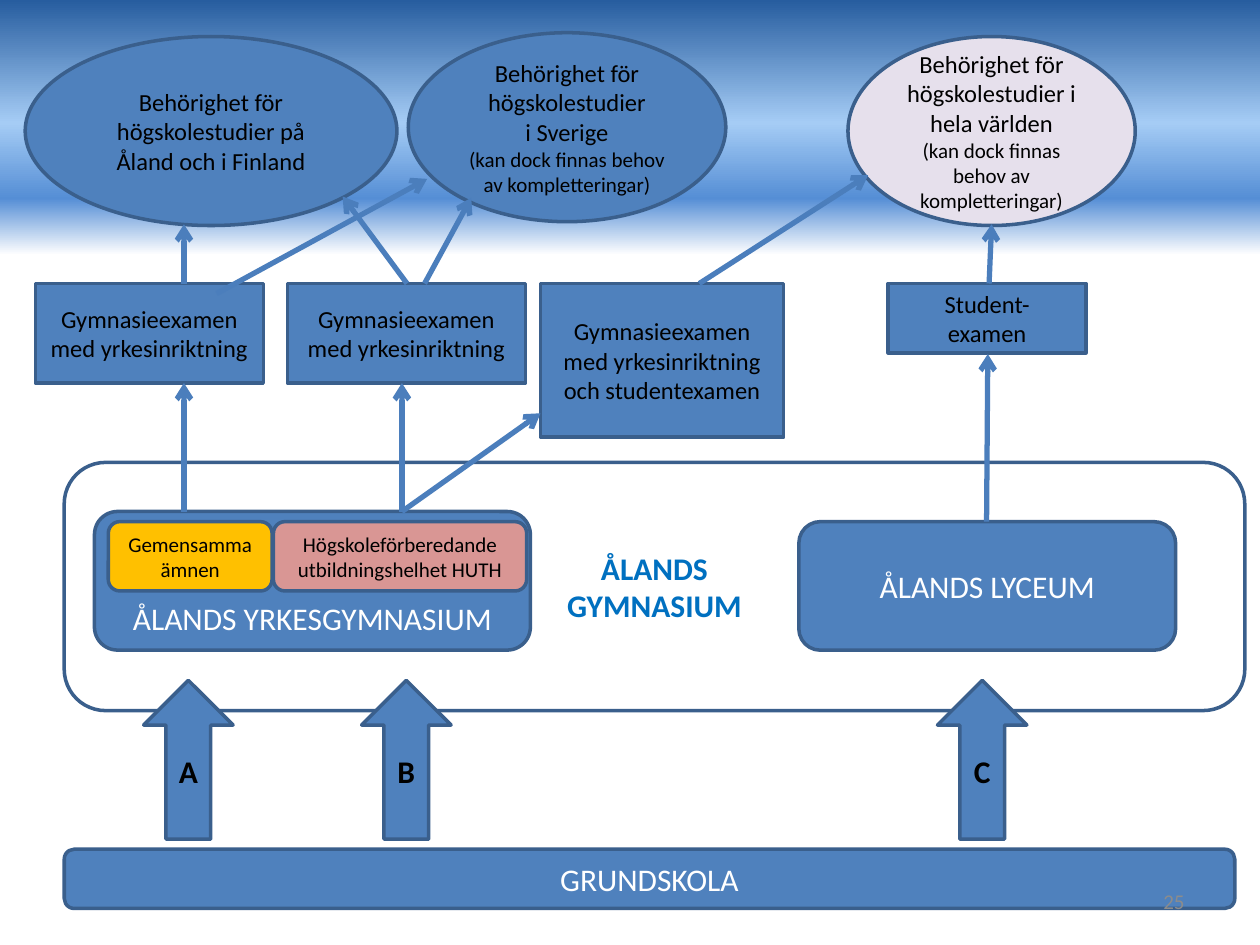
from lxml import etree
from pptx import Presentation
from pptx.dml.color import RGBColor
from pptx.enum.shapes import MSO_CONNECTOR, MSO_SHAPE
from pptx.enum.text import MSO_ANCHOR, PP_ALIGN
from pptx.oxml.ns import qn
from pptx.util import Inches, Pt

ROUND, RECT = MSO_SHAPE.ROUNDED_RECTANGLE, MSO_SHAPE.RECTANGLE
OVAL, UP = MSO_SHAPE.OVAL, MSO_SHAPE.UP_ARROW
MIDDLE, BOTTOM = MSO_ANCHOR.MIDDLE, MSO_ANCHOR.BOTTOM
CENTER, RIGHT = PP_ALIGN.CENTER, PP_ALIGN.RIGHT
STRAIGHT = MSO_CONNECTOR.STRAIGHT

FONT = "Calibri"
BLUE, EDGE, ARROW = "4F81BD", "3A5F8C", "4B7EBC"
BLACK, WHITE = "000000", "FFFFFF"
NOTE_SIZE = 12
SKY = [(0, "275D9F"), (13, "A5CCF5"), (21, "558ED5"), (27, WHITE)]

# Content: paragraphs, then left, top, width, height
FRAME = (["ÅLANDS", "GYMNASIUM"], (0.51, 3.67, 9.37, 1.97))
BASE = (["GRUNDSKOLA"], (0.51, 6.74, 9.29, 0.47))
LYCEUM = (["ÅLANDS LYCEUM"], (6.34, 4.14, 2.99, 1.02))
VOCATIONAL = (["ÅLANDS YRKESGYMNASIUM"], (0.75, 4.06, 3.46, 1.1))
PARTS = [
    (["Gemensamma ämnen"], (0.86, 4.14, 1.3, 0.55), "FFC000"),
    (["Högskoleförberedande utbildningshelhet HUTH"], (2.17, 4.14, 2.01, 0.55), "D99694"),
]
PATHWAYS = [("A", 1.14), ("B", 2.87), ("C", 7.44)]
EXAMS = [
    (["Gymnasieexamen med yrkesinriktning"], (0.28, 2.25, 1.81, 0.79)),
    (["Gymnasieexamen med yrkesinriktning"], (2.28, 2.25, 1.89, 0.79)),
    (["Gymnasieexamen med yrkesinriktning och studentexamen"], (4.29, 2.25, 1.93, 1.22)),
    (["Student-", "examen"], (7.05, 2.25, 1.57, 0.55)),
]
SMALL_NOTE = "(kan dock finnas behov av kompletteringar)"
ELIGIBILITY = [
    (["Behörighet för högskolestudier på Åland och i Finland"], (0.2, 0.29, 2.95, 1.5), BLUE),
    (["Behörighet för högskolestudier", "i Sverige", SMALL_NOTE], (3.24, 0.26, 2.52, 1.5), BLUE),
    (["Behörighet för högskolestudier i hela världen", SMALL_NOTE],
     (6.73, 0.29, 2.28, 1.5), "E6E0EC"),
]
ARROWS = [
    # School to exam
    (1.46, 4.06, 1.46, 3.04), (3.19, 4.06, 3.19, 3.04),
    (3.19, 4.06, 4.29, 3.28), (7.83, 4.14, 7.84, 2.81),
    # Exam to eligibility
    (1.46, 2.25, 1.46, 1.78), (1.72, 2.33, 3.39, 1.42),
    (3.23, 2.25, 2.72, 1.56), (3.37, 2.25, 3.74, 1.57),
    (5.55, 2.25, 6.89, 1.39), (7.85, 2.25, 7.87, 1.78),
]
PAGE_NUMBER = (["25"], (7.17, 6.95, 2.33, 0.4))


def rgb(value):
    return RGBColor.from_string(value)


def write(box, lines, size, color, bold=False, anchor=MIDDLE, align=CENTER):
    frame = box.text_frame
    frame.word_wrap = True
    frame.vertical_anchor = anchor
    for index, line in enumerate(lines):
        para = frame.paragraphs[0] if index == 0 else frame.add_paragraph()
        para.alignment = align
        span = para.add_run()
        span.text = line
        points = NOTE_SIZE if line == SMALL_NOTE else size
        looks = {"name": FONT, "size": Pt(points), "bold": bold}
        for name, value in looks.items():
            setattr(span.font, name, value)
        span.font.color.rgb = rgb(color)


def add_box(shapes, kind, lines, place, fill=BLUE, size=18, color=WHITE, **text):
    box = shapes.add_shape(kind, *map(Inches, place))
    box.shadow.inherit = False
    box.fill.solid()
    box.fill.fore_color.rgb = rgb(fill)
    box.line.color.rgb = rgb(EDGE)
    box.line.width = Pt(2)
    write(box, lines, size, color, **text)


def add_arrow(shapes, ends):
    arrow = shapes.add_connector(STRAIGHT, *map(Inches, ends))
    arrow.line.color.rgb = rgb(ARROW)
    arrow.line.width = Pt(3)
    etree.SubElement(arrow.line._get_or_add_ln(), qn("a:tailEnd"), type="arrow")
    etree.SubElement(arrow._element.spPr, qn("a:effectLst"))


def paint_background(page):
    fill = page.background.fill
    fill.gradient()
    fill.gradient_angle = 270  # counter-clockwise, so top to bottom
    stops = page._element.find(".//" + qn("a:gsLst"))
    for stop in list(stops):
        stops.remove(stop)
    for percent, color in SKY:
        stop = etree.SubElement(stops, qn("a:gs"), pos=str(percent * 1000))
        etree.SubElement(stop, qn("a:srgbClr"), val=color)


def main():
    deck = Presentation()
    deck.slide_width, deck.slide_height = Inches(10), Inches(7.5)
    page = deck.slides.add_slide(deck.slide_layouts[6])
    shapes = page.shapes
    paint_background(page)

    # Schools and the ways into them
    add_box(shapes, ROUND, *FRAME, fill=WHITE, color="0070C0", bold=True)
    add_box(shapes, ROUND, *BASE)
    for letter, left in PATHWAYS:
        add_box(shapes, UP, [letter], (left, 5.4, 0.71, 1.26), color=BLACK, bold=True)
    add_box(shapes, ROUND, *LYCEUM)
    group = shapes.add_group_shape()
    add_box(group.shapes, ROUND, *VOCATIONAL, anchor=BOTTOM)
    for lines, place, fill in PARTS:
        add_box(group.shapes, ROUND, lines, place, fill, 12, BLACK)

    # Exams and what they lead to
    for lines, place in EXAMS:
        add_box(shapes, RECT, lines, place, BLUE, 14, BLACK)
    for lines, place, fill in ELIGIBILITY:
        add_box(shapes, OVAL, lines, place, fill, 14, BLACK)
    for ends in ARROWS:
        add_arrow(shapes, ends)

    # Page number
    lines, place = PAGE_NUMBER
    number = shapes.add_textbox(*map(Inches, place))
    write(number, lines, 12, "8C8C8C", align=RIGHT)

    deck.save("out.pptx")


if __name__ == "__main__":
    main()
